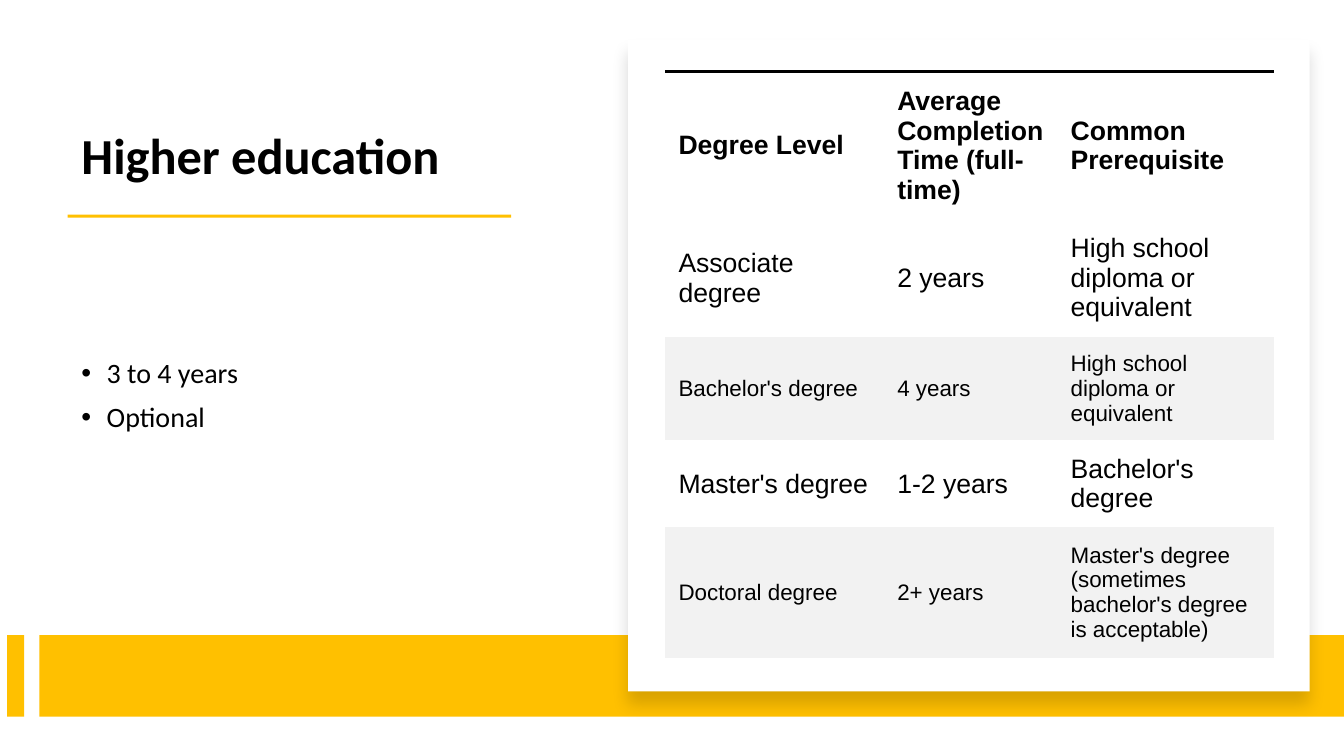
from lxml import etree
from pptx import Presentation
from pptx.dml.color import RGBColor
from pptx.enum.shapes import MSO_SHAPE as SHAPE
from pptx.enum.text import MSO_ANCHOR as ANCHOR
from pptx.oxml.ns import qn
from pptx.util import Inches, Pt

COLORS = {"ink": "000000", "accent": "FFC000", "card": "FFFFFF", "band": "F2F2F2"}


def rgb(name):
    return RGBColor.from_string(COLORS[name])


def add_color(parent, name):
    fill = etree.SubElement(parent, qn("a:solidFill"))
    return etree.SubElement(fill, qn("a:srgbClr"), val=COLORS[name])


class SlideBuilder:
    heading_font = "Calibri"
    table_font = "Arial"

    def __init__(self, slide):
        self.slide = slide

    def style(self, p, font, size, bold=False):
        for r in p.runs:
            r.font.name, r.font.size, r.font.bold = font, Pt(size), bold
            r.font.color.rgb = rgb("ink")

    def rect(self, x, y, w, h, color):
        s = self.slide.shapes.add_shape(
            SHAPE.RECTANGLE, Inches(x), Inches(y), Inches(w), Inches(h))
        s.shadow.inherit = False
        s.fill.solid()
        s.fill.fore_color.rgb = rgb(color)
        s.line.fill.background()
        return s

    def card(self, x, y, w, h):
        s = self.rect(x, y, w, h, "card")
        effects = s._element.spPr.find(qn("a:effectLst"))
        shadow = etree.SubElement(
            effects, qn("a:outerShdw"), blurRad=str(Pt(11)), dist=str(Pt(10)),
            dir="5400000", algn="t", rotWithShape="0")
        color = etree.SubElement(shadow, qn("a:srgbClr"), val=COLORS["ink"])
        etree.SubElement(color, qn("a:alpha"), val="15000")

    def text(self, x, y, w, h, lines, size, anchor, bold=False, bullets=False):
        s = self.slide.shapes.add_textbox(Inches(x), Inches(y), Inches(w), Inches(h))
        tf = s.text_frame
        tf.word_wrap = True
        tf.vertical_anchor = anchor
        tf.text = "\n".join(lines)
        for p in tf.paragraphs:
            p.line_spacing = 0.9
            self.style(p, self.heading_font, size, bold)
            if bullets:
                p.space_before = Pt(10)
                pPr = p._p.get_or_add_pPr()
                pPr.set("marL", str(Inches(0.25)))
                pPr.set("indent", str(Inches(-0.25)))
                etree.SubElement(pPr, qn("a:buFont"), typeface="Arial")
                etree.SubElement(pPr, qn("a:buChar"), char="•")

    def borders(self, cell, top):
        tcPr = cell._tc.get_or_add_tcPr()
        for i, side in enumerate(("lnL", "lnR", "lnT", "lnB")):
            ln = etree.Element(qn("a:" + side))
            if top and side == "lnT":
                ln.set("w", str(Pt(2.25)))
                add_color(ln, "ink")
            else:
                ln.set("w", "0")
                etree.SubElement(ln, qn("a:noFill"))
            tcPr.insert(i, ln)

    def table(self, x, y, widths, heights, rows):
        table = self.slide.shapes.add_table(
            len(rows), len(widths), Inches(x), Inches(y),
            Inches(sum(widths)), Inches(sum(heights))).table
        table.first_row = table.horz_banding = False
        for column, w in zip(table.columns, widths):
            column.width = Inches(w)
        for i, (row, h, values) in enumerate(zip(table.rows, heights, rows)):
            row.height = Inches(h)
            header, banded = i == 0, i > 0 and i % 2 == 0
            for cell, value in zip(row.cells, values):
                cell.text = value
                cell.vertical_anchor = ANCHOR.MIDDLE
                cell.margin_left = cell.margin_right = Inches(0.13)
                cell.margin_top = cell.margin_bottom = Inches(0.09)
                if banded:
                    cell.fill.solid()
                    cell.fill.fore_color.rgb = rgb("band")
                else:
                    cell.fill.background()
                self.borders(cell, top=header)
                self.style(cell.text_frame.paragraphs[0], self.table_font,
                           16 if banded else 19, header)


def main():
    prs = Presentation()
    prs.slide_width, prs.slide_height = Inches(13.33), Inches(7.5)
    b = SlideBuilder(prs.slides.add_slide(prs.slide_layouts[6]))

    # Title and bullets
    b.text(0.71, 0.58, 4.68, 1.31, ["Higher education"], 36, ANCHOR.BOTTOM, bold=True)
    b.rect(0.67, 2.13, 4.4, 0.03, "accent")
    b.text(0.71, 2.22, 4.68, 3.43, ["3 to 4 years", "Optional"], 20,
           ANCHOR.MIDDLE, bullets=True)

    # Bottom band
    for x, w in ((0.07, 0.17), (0.39, 12.94)):
        b.rect(x, 6.3, w, 0.81, "accent")

    # Degree table on its card
    b.card(6.23, 0.39, 6.76, 6.47)
    b.table(6.6, 0.71, [2.17, 1.72, 2.15], [1.47, 1.16, 1.03, 0.86, 1.3], [
        ["Degree Level", "Average Completion Time (full-time)", "Common Prerequisite"],
        ["Associate degree", "2 years", "High school diploma or equivalent"],
        ["Bachelor's degree", "4 years", "High school diploma or equivalent"],
        ["Master's degree", "1-2 years", "Bachelor's degree"],
        ["Doctoral degree", "2+ years",
         "Master's degree (sometimes bachelor's degree is acceptable)"],
    ])

    prs.save("out.pptx")


if __name__ == "__main__":
    main()
